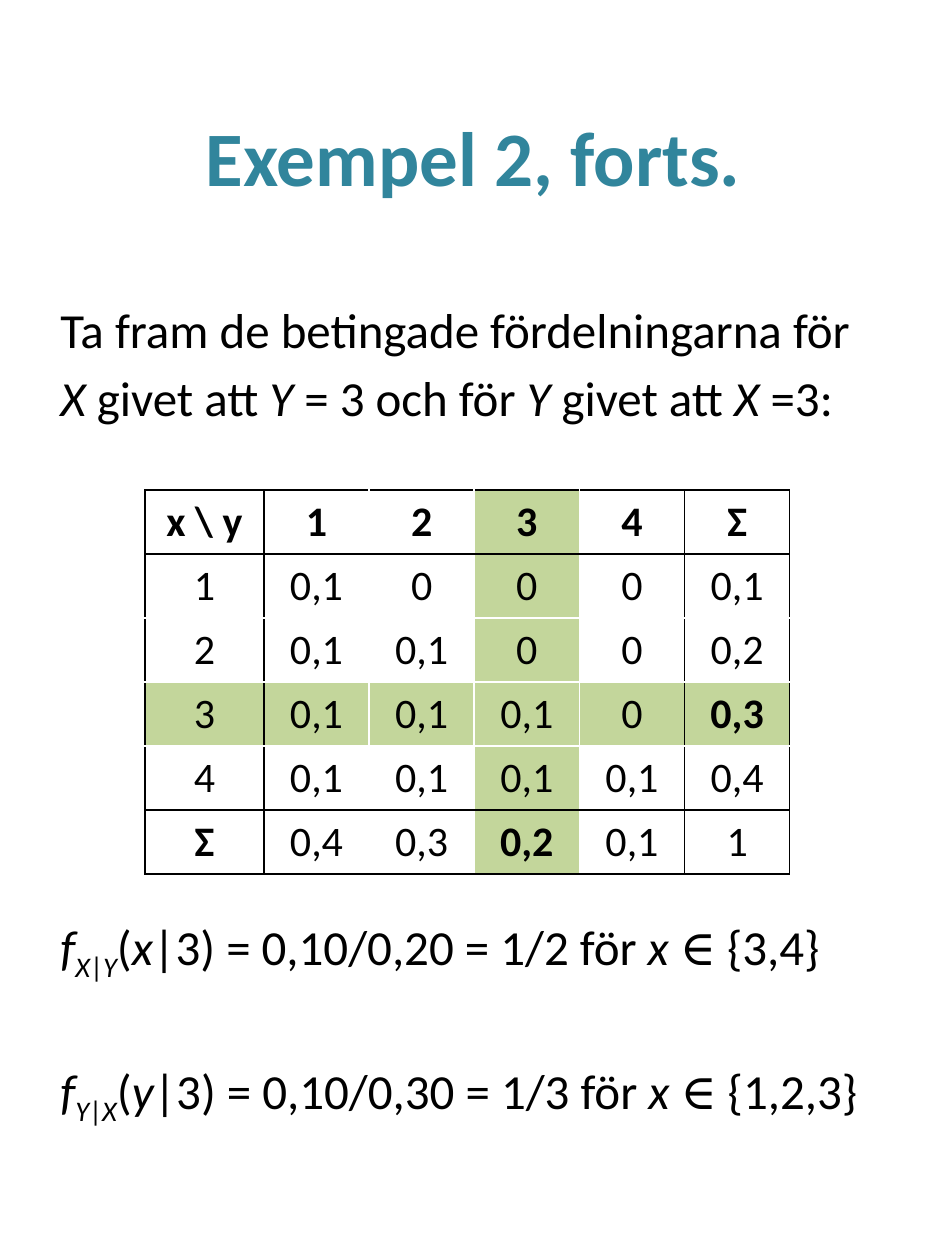
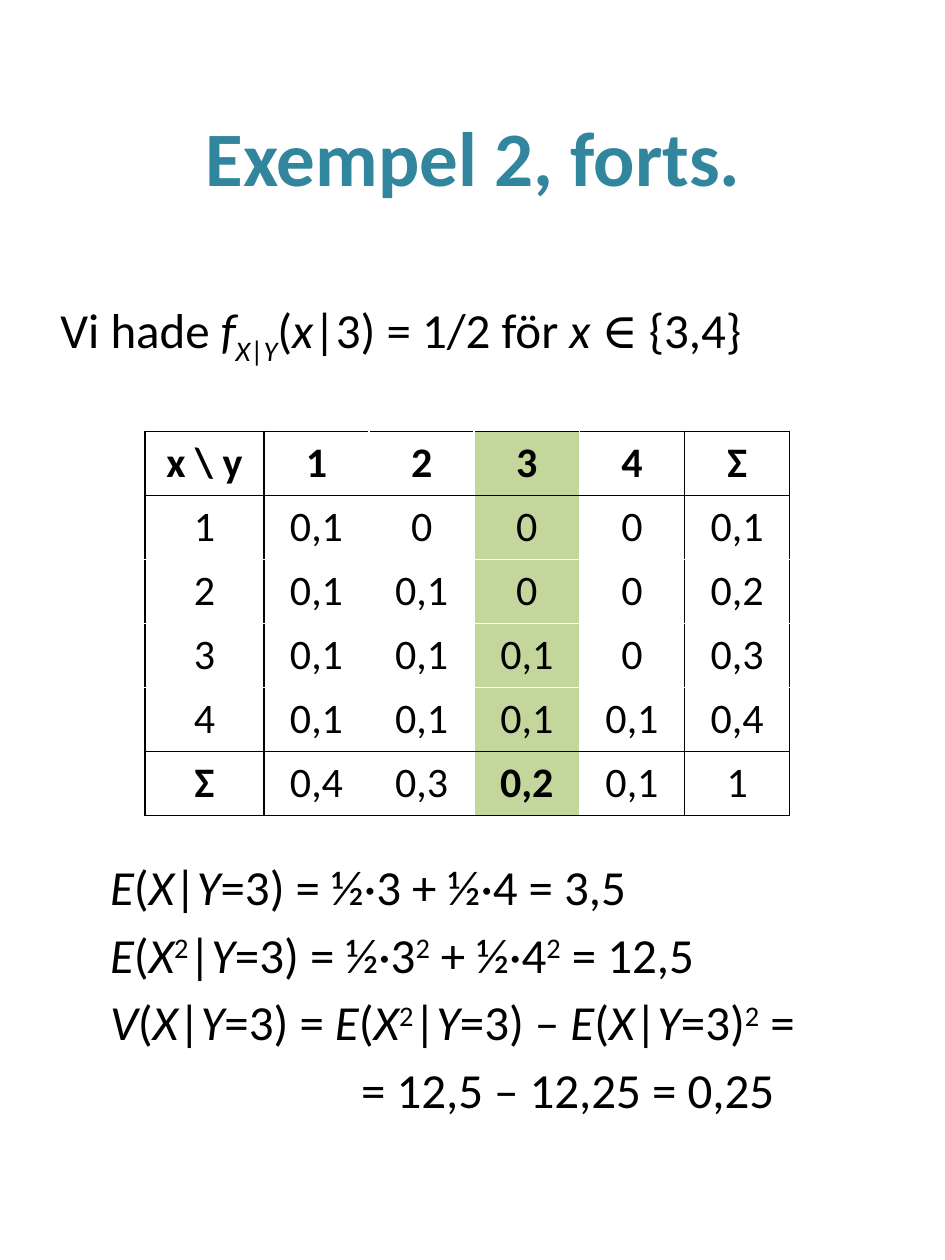
from itertools import groupby

from lxml import etree
from pptx import Presentation
from pptx import util as u
from pptx.dml.color import RGBColor
from pptx.enum import text
from pptx.oxml.ns import qn

FONT, SYMBOL_FONT = "Calibri", "Cambria"
TEAL, GREEN, BLACK, WHITE = "31859C", "C3D69B", "000000", "FFFFFF"
BODY_SIZE, CELL_SIZE, TITLE_SIZE = 28, 24, 44

# Vertical rhythm of the body text, in points
LINE_PITCH, LINE_GAP = 39.25, 5.1

# Joint distribution with marginal sums
DISTRIBUTION = [
    ["x \\ y", "1", "2", "3", "4", "Σ"],
    ["1", "0,1", "0", "0", "0", "0,1"],
    ["2", "0,1", "0,1", "0", "0", "0,2"],
    ["3", "0,1", "0,1", "0,1", "0", "0,3"],
    ["4", "0,1", "0,1", "0,1", "0,1", "0,4"],
    ["Σ", "0,4", "0,3", "0,2", "0,1", "1"],
]
LAST = len(DISTRIBUTION) - 1
RULED = (0, 1, LAST, LAST + 1)  # grid lines drawn in black

# Markup in body lines: *italic*, _subscript_, ^superscript^
MARKS = {"*": "italic", "_": "sub", "^": "super"}
BASELINES = {"sub": "-25000", "super": "30000"}


def rgb(value):
    return RGBColor.from_string(value)


def space_after_lines(lines):
    """Space before a paragraph that skips a number of lines."""
    return u.Pt(lines * LINE_PITCH + LINE_GAP)


def styled_chars(markup):
    """Yield (active styles, character) for each visible character."""
    active = frozenset()
    for ch in markup:
        if ch in MARKS:
            active ^= {MARKS[ch]}
        else:
            yield active | ({"symbol"} if ch == "∈" else set()), ch


class Deck:
    def __init__(self):
        self.prs = Presentation()
        self.prs.slide_width, self.prs.slide_height = u.Cm(19.05), u.Cm(25.4)
        self.s = None

    def format_font(self, font, size, color=BLACK, **extra):
        values = {"name": FONT, "size": u.Pt(size), "bold": False, **extra}
        for name, value in values.items():
            setattr(font, name, value)
        font.color.rgb = rgb(color)

    def slide(self, title):
        self.s = self.prs.slides.add_slide(self.prs.slide_layouts[5])
        sp = self.s.shapes.title
        box = {"left": 0.97, "top": 1.02, "width": 17.15, "height": 4.24}
        for name, value in box.items():
            setattr(sp, name, u.Cm(value))
        tf = sp.text_frame
        tf.vertical_anchor = text.MSO_ANCHOR.MIDDLE
        p = tf.paragraphs[0]
        p.alignment = text.PP_ALIGN.CENTER
        r = p.add_run()
        r.text = title
        self.format_font(r.font, TITLE_SIZE, TEAL, bold=True)

    def body(self, lines):
        """Each line is (markup, lines skipped above, left indent in cm)."""
        sp = self.s.shapes.add_textbox(u.Cm(0.97), u.Cm(5.92), u.Cm(16.97), u.Cm(17.37))
        tf = sp.text_frame
        tf.word_wrap = True
        for i, (markup, skipped, indent) in enumerate(lines):
            p = tf.paragraphs[0] if i == 0 else tf.add_paragraph()
            if i:
                p.space_before = space_after_lines(skipped)
            if indent:
                p._p.get_or_add_pPr().set("marL", str(u.Cm(indent)))
            self.runs(p, markup)

    def runs(self, p, markup):
        for styles, chars in groupby(styled_chars(markup), key=lambda pair: pair[0]):
            r = p.add_run()
            r.text = "".join(ch for _, ch in chars)
            name = SYMBOL_FONT if "symbol" in styles else FONT
            self.format_font(r.font, BODY_SIZE, name=name, italic="italic" in styles)
            for style in styles & BASELINES.keys():
                r._r.get_or_add_rPr().set("baseline", BASELINES[style])

    def borders(self, cell, row, col):
        tc_pr = cell._tc.get_or_add_tcPr()
        edges = {"a:lnL": col, "a:lnR": col + 1, "a:lnT": row, "a:lnB": row + 1}
        for tag, line in edges.items():
            ln = etree.SubElement(tc_pr, qn(tag), w=str(u.Pt(1)))
            fill = etree.SubElement(ln, qn("a:solidFill"))
            etree.SubElement(fill, qn("a:srgbClr"), val=BLACK if line in RULED else WHITE)

    def table(self, top, marked_row=None, marked_col=None):
        """Distribution table with one row and/or column highlighted."""
        n = len(DISTRIBUTION)
        tbl = self.s.shapes.add_table(n, n, u.Cm(2.92), u.Cm(top), u.Cm(12.98), u.Cm(7.74)).table
        tbl.first_row = tbl.horz_banding = False
        for i in range(n):
            tbl.columns[i].width = u.Cm(2.4 if i == 0 else 2.12)
            tbl.rows[i].height = u.Cm(1.29)
        bold_cells = {(LAST, 0), (marked_row, LAST), (LAST, marked_col)}
        for row, values in enumerate(DISTRIBUTION):
            for col, value in enumerate(values):
                cell = tbl.cell(row, col)
                self.borders(cell, row, col)
                if row == marked_row or col == marked_col:
                    cell.fill.solid()
                    cell.fill.fore_color.rgb = rgb(GREEN)
                else:
                    cell.fill.background()
                cell.vertical_anchor = text.MSO_ANCHOR.MIDDLE
                p = cell.text_frame.paragraphs[0]
                p.alignment = text.PP_ALIGN.CENTER
                r = p.add_run()
                r.text = value
                self.format_font(r.font, CELL_SIZE, bold=row == 0 or (row, col) in bold_cells)


def main():
    deck = Deck()
    title = "Exempel 2, forts."

    # Conditional distributions
    deck.slide(title)
    deck.body([
        ("Ta fram de betingade fördelningarna för", 0, 0),
        ("*X* givet att *Y* = 3 och för *Y* givet att *X* =3:", 0, 0),
        ("*f_X*|*Y*_(*x*|3) = 0,10/0,20 = 1/2 för *x *∈ {3,4}", 7, 0),
        ("*f_Y*|*X*_(*y*|3) = 0,10/0,30 = 1/3 för *x *∈ {1,2,3}", 1, 0),
    ])
    deck.table(9.88, marked_row=3, marked_col=3)

    # Conditional expectation and variance
    deck.slide(title)
    deck.body([
        ("Vi hade *f_X*|*Y*_(*x*|3) = 1/2 för *x *∈ {3,4}", 0, 0),
        ("*E*(*X*|*Y*=3) = ½·3 + ½·4 = 3,5", 7, 1),
        ("*E*(*X*^2^|*Y*=3) = ½·3^2^ + ½·4^2^ = 12,5", 0, 1),
        ("*V*(*X*|*Y*=3) = *E*(*X*^2^|*Y*=3) – *E*(*X*|*Y*=3)^2^ =", 0, 1),
        ("= 12,5 – 12,25 = 0,25", 0, 6.06),
    ])
    deck.table(8.7, marked_col=3)

    deck.prs.save("out.pptx")


if __name__ == "__main__":
    main()
